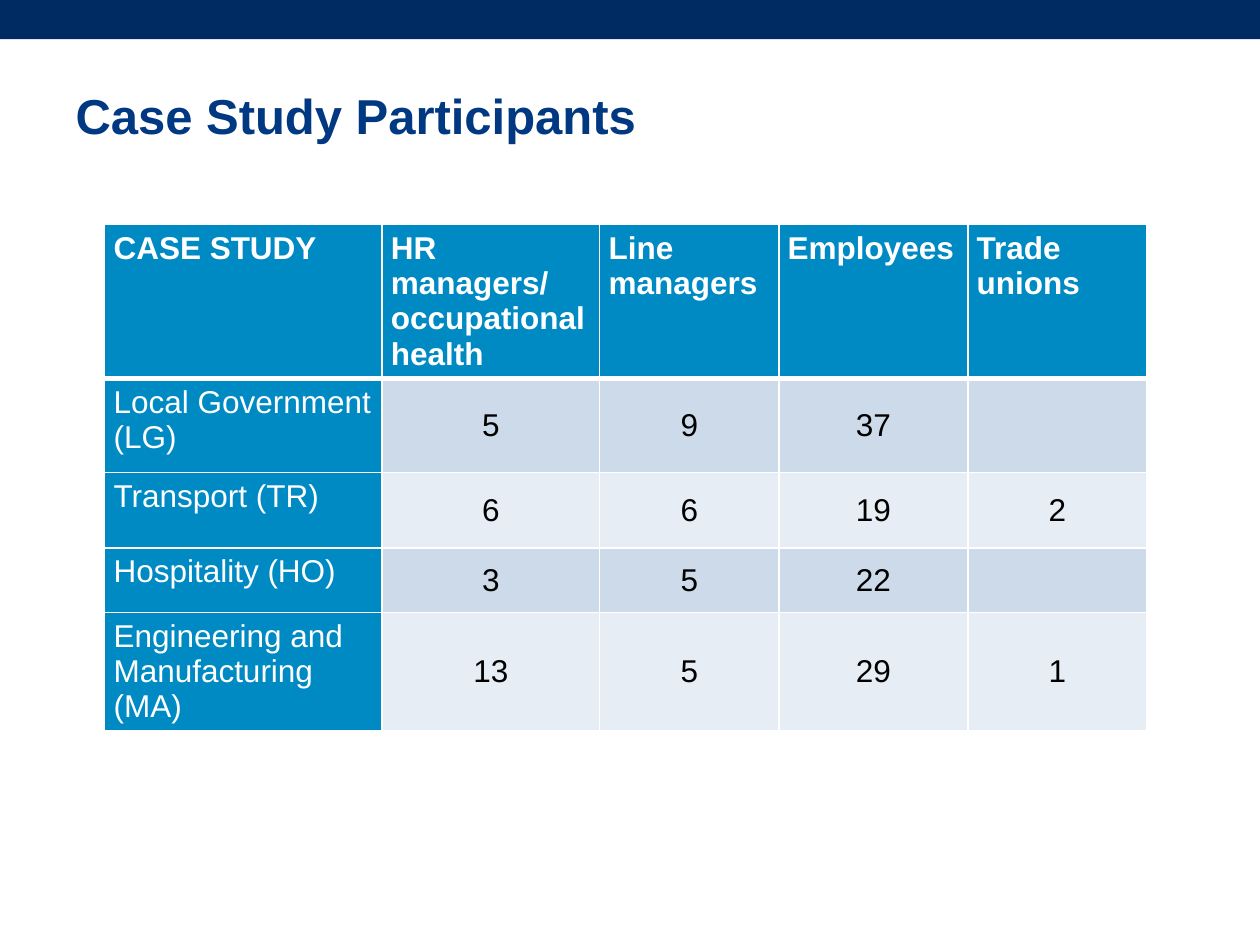
from lxml.etree import SubElement
from pptx import Presentation
from pptx.dml.color import RGBColor
from pptx.enum.shapes import MSO_SHAPE
from pptx.enum.text import MSO_ANCHOR as Anchor, PP_ALIGN as Align
from pptx.oxml.ns import qn
from pptx.util import Cm, Pt

NAVY, TITLE_BLUE, HEADING_BLUE = "002A62", "003882", "008AC4"
BANDS = ("CCDAEA", "E7EDF5")
WHITE, BLACK = "FFFFFF", "000000"
COLUMN_WIDTHS = (5.59, 4.39, 3.61, 3.81, 3.61)
ROW_HEIGHTS = (3.08, 1.9, 1.52, 1.3, 2.37)
MARGINS = {"margin_left": Cm(0.18), "margin_right": Cm(0.18),
           "margin_top": Cm(0.13), "margin_bottom": Cm(0.13)}
PARTICIPANTS = (
    ("CASE STUDY", "HR managers/\noccupational health", "Line managers",
     "Employees", "Trade unions"),
    ("Local Government (LG)", "5", "9", "37", ""),
    ("Transport (TR)", "6", "6", "19", "2"),
    ("Hospitality (HO)", "3", "5", "22", ""),
    ("Engineering and Manufacturing (MA)", "13", "5", "29", "1"),
)


def color(value):
    """Return the colour for a hex string."""
    return RGBColor.from_string(value)


def apply_format(target, values):
    """Set each named attribute on the target."""
    for name, value in values.items():
        setattr(target, name, value)


def format_text(frame, size, text_color, bold, align):
    """Format every paragraph of a text frame."""
    for paragraph in frame.paragraphs:
        paragraph.alignment = align
        apply_format(paragraph.font, {"name": "Arial", "size": Pt(size), "bold": bold})
        paragraph.font.color.rgb = color(text_color)


def add_band(slide, width):
    """Draw the dark band along the top edge."""
    band = slide.shapes.add_shape(MSO_SHAPE.RECTANGLE, 0, 0, width, Cm(0.79))
    band.shadow.inherit = False
    band.fill.solid()
    band.fill.fore_color.rgb = color(NAVY)
    band.line.fill.background()


def set_title(slide, text):
    """Place and fill the title placeholder."""
    title = slide.shapes.title
    apply_format(title, {"left": Cm(1.27), "top": Cm(1.52),
                         "width": Cm(23.04), "height": Cm(1.6)})
    title.text_frame.text = text
    title.text_frame.vertical_anchor = Anchor.MIDDLE
    format_text(title.text_frame, 28, TITLE_BLUE, True, Align.LEFT)


def set_borders(cell, top, bottom):
    """Give a cell white borders, with top and bottom widths in points."""
    properties = cell._tc.get_or_add_tcPr()
    for side, width in (("L", 1), ("R", 1), ("T", top), ("B", bottom)):
        line = SubElement(properties, qn(f"a:ln{side}"), w=str(Pt(width)))
        fill = SubElement(line, qn("a:solidFill"))
        SubElement(fill, qn("a:srgbClr"), val=WHITE)


def fill_cell(cell, text, row, column):
    """Write and style one cell according to its place."""
    heading = row == 0 or column == 0
    cell.text = text
    apply_format(cell, MARGINS)
    cell.vertical_anchor = Anchor.TOP if heading else Anchor.MIDDLE
    format_text(cell.text_frame, 18, WHITE if heading else BLACK, row == 0,
                Align.LEFT if heading else Align.CENTER)
    set_borders(cell, 3 if row == 1 else 1, 3 if row == 0 else 1)
    cell.fill.solid()
    cell.fill.fore_color.rgb = color(HEADING_BLUE if heading else BANDS[(row - 1) % 2])


def add_participants_table(slide):
    """Add the table of participants for each case study."""
    table = slide.shapes.add_table(
        len(ROW_HEIGHTS), len(COLUMN_WIDTHS), Cm(2.11), Cm(4.52),
        Cm(sum(COLUMN_WIDTHS)), Cm(sum(ROW_HEIGHTS))).table
    for column, width in zip(table.columns, COLUMN_WIDTHS):
        column.width = Cm(width)
    for row, height in zip(table.rows, ROW_HEIGHTS):
        row.height = Cm(height)
    for row, texts in enumerate(PARTICIPANTS):
        for column, text in enumerate(texts):
            fill_cell(table.cell(row, column), text, row, column)


def main():
    """Build and save the presentation."""
    presentation = Presentation()
    apply_format(presentation, {"slide_width": Cm(25.4), "slide_height": Cm(19.05)})
    slide = presentation.slides.add_slide(presentation.slide_layouts[5])
    add_band(slide, presentation.slide_width)
    set_title(slide, "Case Study Participants")
    add_participants_table(slide)
    presentation.save("out.pptx")


if __name__ == "__main__":
    main()
